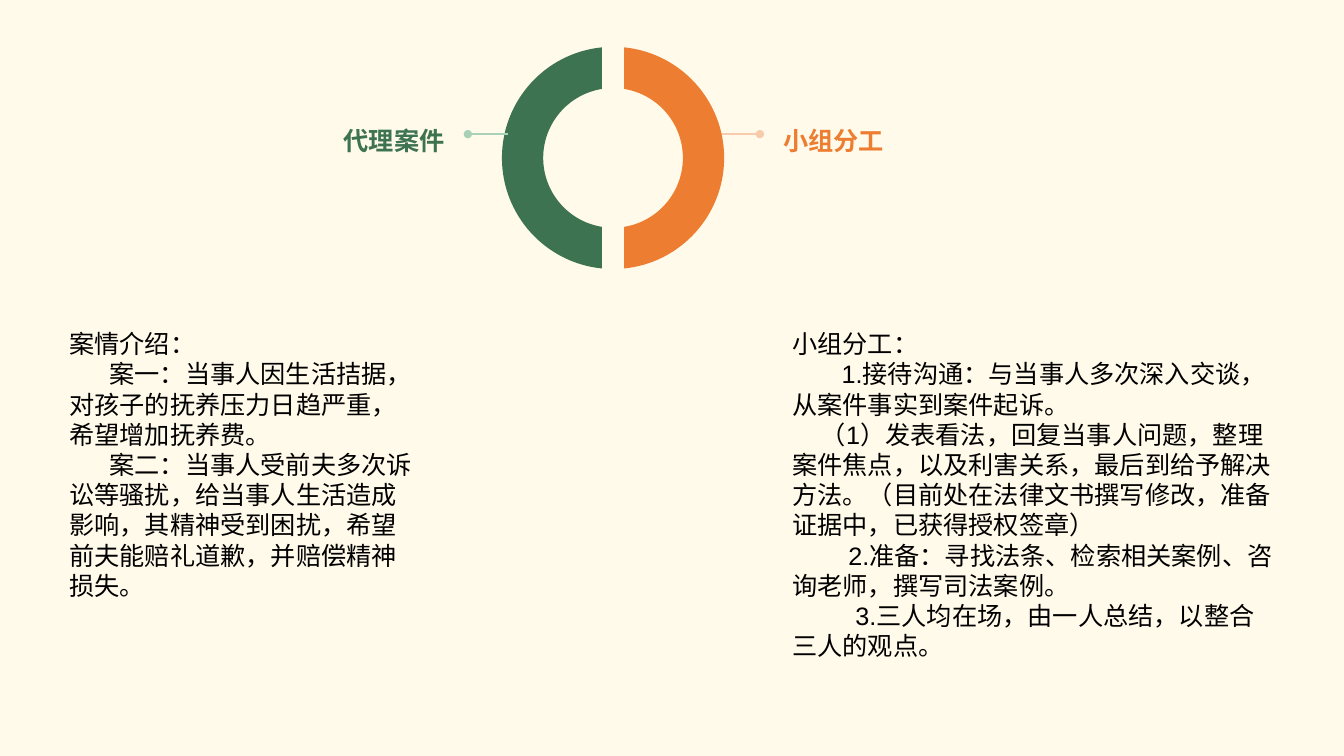
"""Build a slide on represented cases and team roles, around a split ring."""
from dataclasses import dataclass
from math import asin, cos, pi, sin, tan

from lxml.etree import SubElement
from pptx import Presentation
from pptx.dml.color import RGBColor
from pptx.enum.shapes import MSO_CONNECTOR
from pptx.enum.text import MSO_ANCHOR, MSO_AUTO_SIZE, PP_ALIGN
from pptx.oxml.ns import qn
from pptx.slide import Slide
from pptx.text.text import _Paragraph as Paragraph
from pptx.util import Cm, Pt

CREAM, BLACK = "FFFAEA", "000000"
CENTER_X, CENTER_Y = 15.45, 3.98
OUTER_RADIUS, INNER_RADIUS, HALF_GAP = 2.8, 1.76, 0.28
CALLOUT_AXIS = 15.47
LEADER_Y, LEADER_START, LEADER_END = 3.38, 2.66, 3.68
LABEL_OFFSET, LABEL_TOP, LABEL_WIDTH, LABEL_HEIGHT = 4.27, 2.92, 5.51, 1.07
DETAIL_TOP = 8.15

Point = tuple[int, int]


@dataclass(frozen=True)
class Topic:
    """One half of the ring with its label; side is -1 for left, 1 for right."""
    label: str
    side: int
    color: str
    leader_color: str


@dataclass(frozen=True)
class Detail:
    """A text block: each entry is a first-line indent and its wording."""
    left: float
    width: float
    height: float
    entries: tuple[tuple[float, str], ...]


CASES = Topic("代理案件", -1, "3D7351", "A8D1B7")
ROLES = Topic("小组分工", 1, "ED7D31", "F8CBAD")
DETAILS = (
    Detail(1.5, 9.2, 7.19, (
        (0, "案情介绍："),
        (1.01, "案一：当事人因生活拮据，对孩子的抚养压力日趋严重，希望增加抚养费。"),
        (1.01, "案二：当事人受前夫多次诉讼等骚扰，给当事人生活造成影响，"
               "其精神受到困扰，希望前夫能赔礼道歉，并赔偿精神损失。"),
    )),
    Detail(19.72, 12.77, 8.71, (
        (0, "小组分工："),
        (1.24, "1.接待沟通：与当事人多次深入交谈，从案件事实到案件起诉。"),
        (0.72, "（1）发表看法，回复当事人问题，整理案件焦点，以及利害关系，"
               "最后到给予解决方法。（目前处在法律文书撰写修改，准备证据中，已获得授权签章）"),
        (1.41, "2.准备：寻找法条、检索相关案例、咨询老师，撰写司法案例。"),
        (1.59, "3.三人均在场，由一人总结，以整合三人的观点。"),
    )),
)


def rgb(value: str) -> RGBColor:
    """Turn a hex string into a colour."""
    return RGBColor.from_string(value)


def add_run(paragraph: Paragraph, wording: str, color: str, bold: bool = False) -> None:
    """Append one styled run."""
    run = paragraph.add_run()
    run.text = wording
    run.font.name = "Arial"
    run.font.size = Pt(18)
    run.font.bold = bold
    run.font.color.rgb = rgb(color)


def ring_point(radius: float, side: int, angle: float, pull: float = 0) -> Point:
    """Find a point on the ring, moved along its tangent by a share of the radius."""
    across = sin(angle) + pull * cos(angle)
    down = pull * sin(angle) - cos(angle)
    return Cm(CENTER_X + side * radius * across), Cm(CENTER_Y + radius * down)


def quarter(radius: float, side: int, start: float, end: float) -> list[Point]:
    """List the two control points and the end of one curve."""
    pull = 4 / 3 * tan((end - start) / 4)
    return [ring_point(radius, side, start, pull),
            ring_point(radius, side, end, -pull),
            ring_point(radius, side, end)]


def draw_half_ring(slide: Slide, topic: Topic) -> None:
    """Draw one coloured half of the ring with four curves."""
    outer, inner = (asin(HALF_GAP / radius) for radius in (OUTER_RADIUS, INNER_RADIUS))
    segments = [
        quarter(OUTER_RADIUS, topic.side, outer, pi / 2),
        quarter(OUTER_RADIUS, topic.side, pi / 2, pi - outer),
        [ring_point(INNER_RADIUS, topic.side, pi - inner)],
        quarter(INNER_RADIUS, topic.side, pi - inner, pi / 2),
        quarter(INNER_RADIUS, topic.side, pi / 2, inner),
    ]
    builder = slide.shapes.build_freeform(*ring_point(OUTER_RADIUS, topic.side, outer))
    builder.add_line_segments([segment[-1] for segment in segments], close=True)
    half_ring = builder.convert_to_shape()
    lines = list(half_ring._element.iter(qn("a:lnTo")))
    for line, segment in zip(lines, segments):
        if len(segment) == 3:
            line.tag = qn("a:cubicBezTo")
            line.clear()
            for x, y in segment:
                SubElement(line, qn("a:pt"), x=str(x - half_ring.left), y=str(y - half_ring.top))
    half_ring.shadow.inherit = False
    half_ring.fill.solid()
    half_ring.fill.fore_color.rgb = rgb(topic.color)
    half_ring.line.fill.background()


def draw_leader(slide: Slide, topic: Topic) -> None:
    """Draw the dotted-end line from the ring towards its label."""
    start, end = (Cm(CALLOUT_AXIS + topic.side * reach) for reach in (LEADER_START, LEADER_END))
    leader = slide.shapes.add_connector(
        MSO_CONNECTOR.STRAIGHT, start, Cm(LEADER_Y), end, Cm(LEADER_Y))
    leader.line.color.rgb = rgb(topic.leader_color)
    leader.line.width = Pt(1)
    SubElement(leader.line._get_or_add_ln(), qn("a:tailEnd"), type="oval")
    SubElement(leader._element.spPr, qn("a:effectLst"))


def draw_label(slide: Slide, topic: Topic) -> None:
    """Write the topic label beside its leader."""
    on_left = topic.side < 0
    left = CALLOUT_AXIS + topic.side * LABEL_OFFSET - (LABEL_WIDTH if on_left else 0)
    label = slide.shapes.add_textbox(
        Cm(left), Cm(LABEL_TOP), Cm(LABEL_WIDTH), Cm(LABEL_HEIGHT)).text_frame
    label.word_wrap = True
    label.vertical_anchor = MSO_ANCHOR.MIDDLE
    label.margin_left = label.margin_right = label.margin_top = label.margin_bottom = 0
    paragraph = label.paragraphs[0]
    paragraph.alignment = PP_ALIGN.RIGHT if on_left else PP_ALIGN.LEFT
    paragraph.line_spacing = 1.2
    add_run(paragraph, topic.label, topic.color, bold=True)


def draw_detail(slide: Slide, detail: Detail) -> None:
    """Write one block of indented paragraphs."""
    block = slide.shapes.add_textbox(
        Cm(detail.left), Cm(DETAIL_TOP), Cm(detail.width), Cm(detail.height)).text_frame
    block.word_wrap = True
    block.auto_size = MSO_AUTO_SIZE.SHAPE_TO_FIT_TEXT
    for position, (indent, wording) in enumerate(detail.entries):
        paragraph = block.add_paragraph() if position else block.paragraphs[0]
        paragraph._p.get_or_add_pPr().set("indent", str(Cm(indent)))
        add_run(paragraph, wording, BLACK)


def main() -> None:
    """Build and save the presentation."""
    deck = Presentation()
    deck.slide_width, deck.slide_height = Cm(33.87), Cm(19.05)
    slide = deck.slides.add_slide(deck.slide_layouts[6])
    slide.background.fill.solid()
    slide.background.fill.fore_color.rgb = rgb(CREAM)
    draw_label(slide, ROLES)
    draw_leader(slide, ROLES)
    for topic in (CASES, ROLES):
        draw_half_ring(slide, topic)
    draw_label(slide, CASES)
    draw_leader(slide, CASES)
    for detail in DETAILS:
        draw_detail(slide, detail)
    deck.save("out.pptx")


if __name__ == "__main__":
    main()
